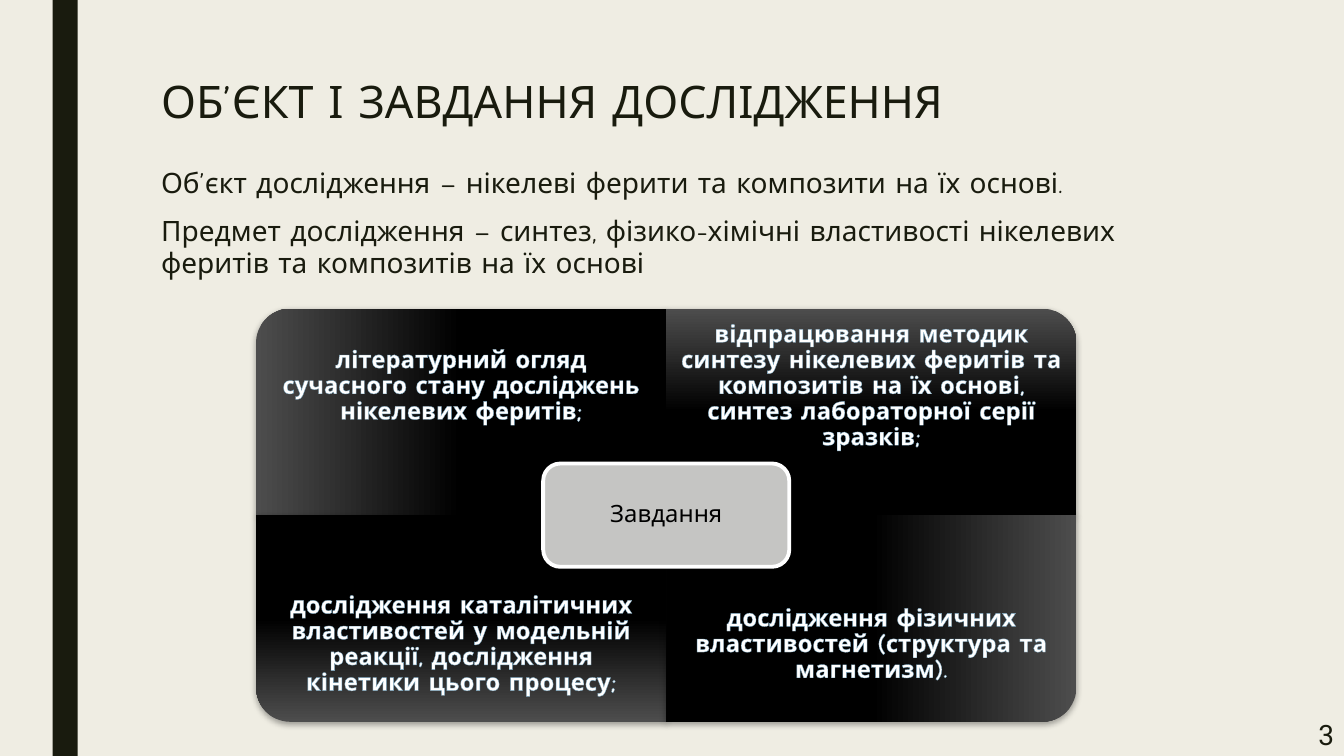
from dataclasses import dataclass

from lxml import etree
from pptx import Presentation
from pptx.dml import color as dml
from pptx.enum import shapes, text
from pptx.oxml import ns
from pptx.util import Pt

COLORS = {
    "background": "EFEDE3", "ink": "191B0E", "glow": "4D4D4D", "black": "000000",
    "white": "FFFFFF", "outline": "77A2BB", "centre": "C5C5C3",
}
HEADING_FONT, NUMBER_FONT = "Comic Neue", "Roboto"
SLIDE_W, SLIDE_H = 960, 540
MATRIX_LEFT, MATRIX_TOP = 182.9, 220.4
QUADRANT_W, QUADRANT_H = 293, 147.6
TASK_H = QUADRANT_H * 0.75
CENTRE_W, CENTRE_H = 175.8, 73.8
ALIGN, ANCHOR = text.PP_ALIGN, text.MSO_ANCHOR


@dataclass(frozen=True)
class Box:
    left: float
    top: float
    width: float
    height: float

    def lengths(self) -> list:
        return [Pt(v) for v in (self.left, self.top, self.width, self.height)]


@dataclass(frozen=True)
class Style:
    size: float
    color: str = "ink"
    font: str = HEADING_FONT
    bold: bool = False
    align: ALIGN = ALIGN.LEFT
    anchor: ANCHOR = ANCHOR.TOP
    line_spacing: float = 1.0
    before: float = 0
    after: float = 0
    insets: tuple = (7.2, 3.6)
    outline: bool = False


@dataclass(frozen=True)
class Task:
    column: int
    row: int
    rotation: int
    words: str


TASKS = [
    Task(0, 0, 270, "літературний огляд сучасного стану досліджень нікелевих феритів;"),
    Task(1, 0, 0, "відпрацювання методик синтезу нікелевих феритів та композитів "
                  "на їх основі, синтез лабораторної серії зразків;"),
    Task(0, 1, 180, "дослідження каталітичних властивостей у модельній реакції, "
                    "дослідження кінетики цього процесу;"),
    Task(1, 1, 90, "дослідження фізичних властивостей (структура та магнетизм)."),
]

TITLE = Style(32, line_spacing=0.89)
BODY = Style(20, line_spacing=0.94, before=10, after=2)
NUMBER = Style(20, font=NUMBER_FONT, align=ALIGN.RIGHT, anchor=ANCHOR.MIDDLE)
TASK = Style(17, "white", bold=True, align=ALIGN.CENTER, anchor=ANCHOR.MIDDLE,
             line_spacing=0.9, insets=(9.5, 9.5), outline=True)
CENTRE = Style(17, "black", align=ALIGN.CENTER, anchor=ANCHOR.MIDDLE,
               line_spacing=0.9, insets=(5, 5))


def rgb(name: str) -> dml.RGBColor:
    return dml.RGBColor.from_string(COLORS[name])


def add_outline(run) -> None:
    line = etree.fromstring(
        f'<a:ln {ns.nsdecls("a")} w="{Pt(0.8)}"><a:solidFill>'
        f'<a:srgbClr val="{COLORS["outline"]}"/></a:solidFill></a:ln>')
    run.font._element.insert(0, line)


def add_shadow(shape) -> None:
    effects = shape._element.spPr.find(ns.qn("a:effectLst"))
    effects.append(etree.fromstring(
        f'<a:outerShdw {ns.nsdecls("a")} blurRad="{Pt(4.5)}" dist="{Pt(1.5)}" '
        f'dir="5400000" algn="ctr" rotWithShape="0"><a:srgbClr val="{COLORS["black"]}">'
        '<a:alpha val="35000"/></a:srgbClr></a:outerShdw>'))


def add_text(slide, box: Box, words: str, style: Style) -> None:
    frame = slide.shapes.add_textbox(*box.lengths()).text_frame
    frame.word_wrap = True
    frame.vertical_anchor = style.anchor
    frame.margin_left = frame.margin_right = Pt(style.insets[0])
    frame.margin_top = frame.margin_bottom = Pt(style.insets[1])
    frame.text = words
    for paragraph in frame.paragraphs:
        paragraph.alignment = style.align
        paragraph.line_spacing = style.line_spacing
        paragraph.space_before, paragraph.space_after = Pt(style.before), Pt(style.after)
        for run in paragraph.runs:
            run.font.name, run.font.size = style.font, Pt(style.size)
            run.font.bold = style.bold
            run.font.color.rgb = rgb(style.color)
            if style.outline:
                add_outline(run)


def add_block(slide, kind: shapes.MSO_SHAPE, box: Box, fill: str):
    block = slide.shapes.add_shape(kind, *box.lengths())
    block.shadow.inherit = False
    block.fill.solid()
    block.fill.fore_color.rgb = rgb(fill)
    block.line.fill.background()
    return block


def add_task(slide, task: Task) -> None:
    left = MATRIX_LEFT + task.column * QUADRANT_W
    top = MATRIX_TOP + task.row * QUADRANT_H
    # A quarter turn swaps the sides around the same centre
    width, height = QUADRANT_W, QUADRANT_H
    if task.rotation % 180:
        width, height = height, width
    box = Box(left + (QUADRANT_W - width) / 2, top + (QUADRANT_H - height) / 2, width, height)
    quadrant = add_block(slide, shapes.MSO_SHAPE.ROUND_1_RECTANGLE, box, "black")
    quadrant.rotation = task.rotation
    quadrant.fill.gradient()
    quadrant.fill.gradient_angle = 270
    for stop, (position, name) in zip(quadrant.fill.gradient_stops,
                                      [(0, "glow"), (0.5, "black")]):
        stop.position, stop.color.rgb = position, rgb(name)
    add_shadow(quadrant)
    words_top = top + task.row * (QUADRANT_H - TASK_H)
    add_text(slide, Box(left, words_top, QUADRANT_W, TASK_H), task.words, TASK)


def main() -> None:
    deck = Presentation()
    deck.slide_width, deck.slide_height = Pt(SLIDE_W), Pt(SLIDE_H)
    slide = deck.slides.add_slide(deck.slide_layouts[6])
    slide.background.fill.solid()
    slide.background.fill.fore_color.rgb = rgb("background")

    # Side bar, title and statements
    add_block(slide, shapes.MSO_SHAPE.RECTANGLE, Box(37.5, 0, 18, SLIDE_H), "ink")
    add_text(slide, Box(108, 54, 756, 60), "ОБ’ЄКТ І ЗАВДАННЯ ДОСЛІДЖЕННЯ", TITLE)
    add_text(slide, Box(108, 116.6, 756, 95),
             "Об’єкт дослідження – нікелеві ферити та композити на їх основі.\n"
             "Предмет дослідження – синтез, фізико-хімічні властивості нікелевих "
             "феритів та композитів на їх основі", BODY)
    add_text(slide, Box(746, 508.3, 214, 31.7), "3", NUMBER)

    # Task matrix
    for task in TASKS:
        add_task(slide, task)

    # Centre label
    box = Box(MATRIX_LEFT + QUADRANT_W - CENTRE_W / 2,
              MATRIX_TOP + QUADRANT_H - CENTRE_H / 2, CENTRE_W, CENTRE_H)
    centre = add_block(slide, shapes.MSO_SHAPE.ROUNDED_RECTANGLE, box, "centre")
    centre.line.color.rgb = rgb("white")
    centre.line.width = Pt(2.75)
    add_text(slide, box, "Завдання", CENTRE)

    deck.save("out.pptx")


if __name__ == "__main__":
    main()
